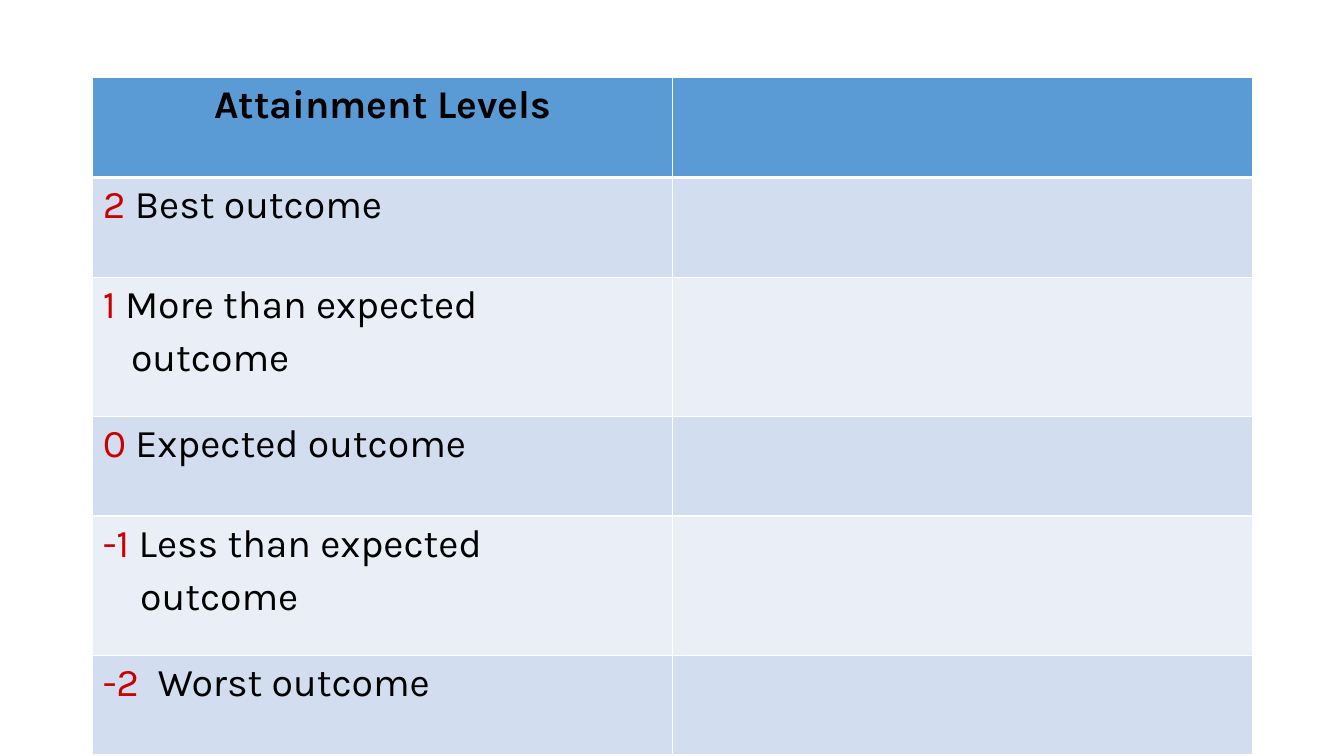
from lxml import etree
from pptx import Presentation
from pptx.dml.color import RGBColor
from pptx.enum.text import PP_ALIGN
from pptx.oxml.ns import qn
from pptx.util import Inches, Pt

COLORS = {
    "header": "5B9BD5",
    "odd": "D2DEEF",
    "even": "EAEFF7",
    "border": "FFFFFF",
    "score": "CC0000",
    "text": "000000",
}
LEVELS = [
    ("2", " Best outcome", "", 0),
    ("1", " More than expected", "outcome", 0.28),
    ("0", " Expected outcome", "", 0),
    ("-1", " Less than expected", "outcome", 0.37),
    ("-2", "  Worst outcome", "", 0),
]


def add_text(paragraph, text, color, bold=False):
    run = paragraph.add_run()
    run.text = text
    run.font.name = "Karla"
    run.font.size = Pt(28)
    run.font.bold = bold
    run.font.color.rgb = RGBColor.from_string(COLORS[color])
    paragraph.space_before = Pt(5.6)


def style_cell(cell, fill, top, bottom):
    cell.fill.solid()
    cell.fill.fore_color.rgb = RGBColor.from_string(COLORS[fill])
    properties = cell._tc.get_or_add_tcPr()
    sides = [("a:lnL", 1), ("a:lnR", 1), ("a:lnT", top), ("a:lnB", bottom)]
    for position, (side, width) in enumerate(sides):
        line = etree.Element(qn(side), w=str(Pt(width)))
        solid = etree.SubElement(line, qn("a:solidFill"))
        etree.SubElement(solid, qn("a:srgbClr"), val=COLORS["border"])
        properties.insert(position, line)


prs = Presentation()
prs.slide_width = Inches(13.33)
prs.slide_height = Inches(7.5)
slide = prs.slides.add_slide(prs.slide_layouts[6])

attainment = slide.shapes.add_table(
    len(LEVELS) + 1, 2, Inches(0.92), Inches(0.77), Inches(11.5), Inches(6.7)
).table

header = attainment.cell(0, 0).text_frame.paragraphs[0]
header.alignment = PP_ALIGN.CENTER
add_text(header, "Attainment Levels", "text", bold=True)
attainment.rows[0].height = Inches(0.99)

for index, (score, outcome, continuation, indent) in enumerate(LEVELS, start=1):
    attainment.rows[index].height = Inches(1.38 if continuation else 0.99)
    level = attainment.cell(index, 0).text_frame
    add_text(level.paragraphs[0], score, "score")
    add_text(level.paragraphs[0], outcome, "text")
    if continuation:
        second_line = level.add_paragraph()
        add_text(second_line, continuation, "text")
        second_line._p.get_or_add_pPr().set("marL", str(Inches(indent)))

for index, row in enumerate(attainment.rows):
    fill = "header" if index == 0 else "odd" if index % 2 else "even"
    for cell in row.cells:
        style_cell(cell, fill, 3 if index == 1 else 1, 3 if index == 0 else 1)

prs.save("out.pptx")
